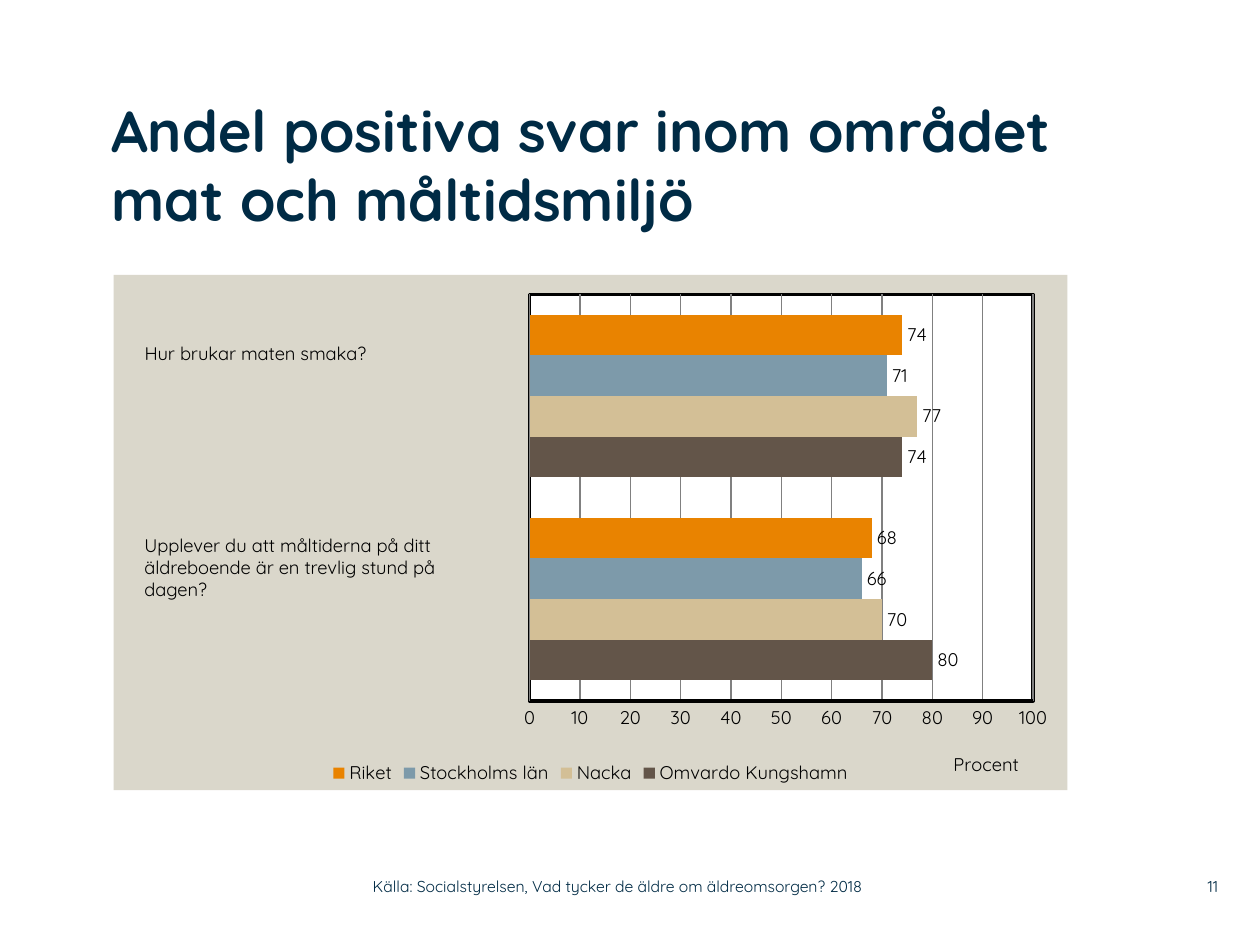
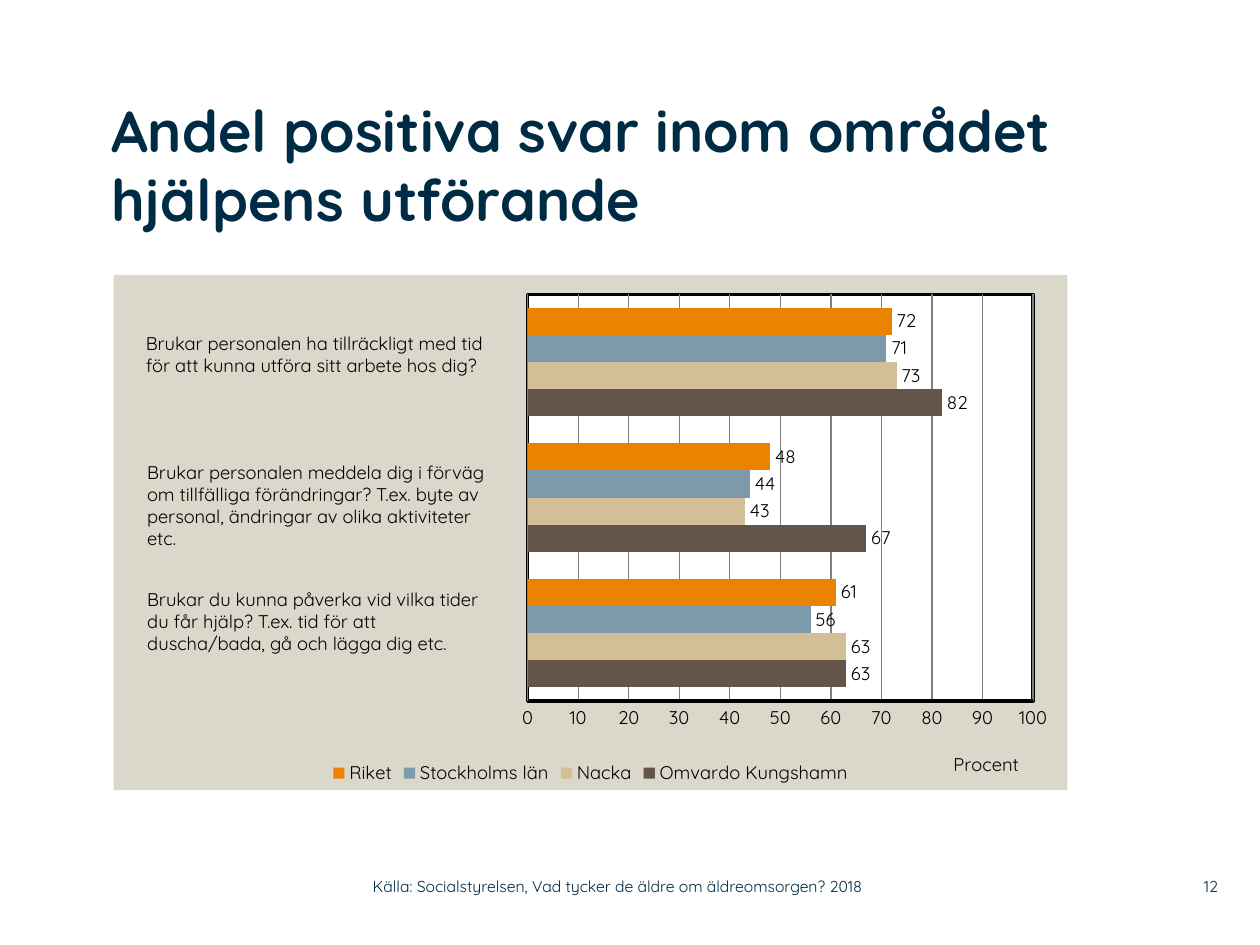
import dataclasses

import pptx
import pptx.chart.data
import pptx.dml.color
import pptx.enum.chart
import pptx.enum.text
import pptx.oxml
import pptx.oxml.ns
import pptx.util

Pt = pptx.util.Pt
RGBColor = pptx.dml.color.RGBColor
qn = pptx.oxml.ns.qn


@dataclasses.dataclass(frozen=True)
class Theme:
    font: str = "Quicksand"
    navy: str = "002B45"
    black: str = "000000"
    white: str = "FFFFFF"
    panel: str = "DAD7CB"
    grid: str = "808080"
    title_size: float = 33
    body_size: float = 10.5
    footer_size: float = 9
    axis_width: float = 2
    grid_width: float = 0.75


@dataclasses.dataclass(frozen=True)
class Box:
    left: float
    top: float
    width: float
    height: float

    def lengths(self) -> tuple:
        return tuple(Pt(value) for value in dataclasses.astuple(self))


@dataclasses.dataclass(frozen=True)
class Respondent:
    name: str
    color: str


@dataclasses.dataclass(frozen=True)
class Question:
    box: Box
    lines: tuple[str, ...]
    percentages: tuple[int, ...]


@dataclasses.dataclass(frozen=True)
class SurveyArea:
    title: str
    title_width: float
    number: int
    plot_left: float
    plot_width: float
    questions: tuple[Question, ...]


THEME = Theme()
CHART_BOX = Box(65, 157, 545, 294.5)
SOURCE_BOX = Box(213, 496, 319, 21)
NUMBER_BOX = Box(662.5, 496, 33.5, 21)
SOURCE = "Källa: Socialstyrelsen, Vad tycker de äldre om äldreomsorgen? 2018"

RESPONDENTS = (
    Respondent("Omvardo Kungshamn", "635549"),
    Respondent("Nacka", "D3BF96"),
    Respondent("Stockholms län", "7D9AAA"),
    Respondent("Riket", "E98300"),
)

AREAS = (
    SurveyArea(
        "Andel positiva svar inom området mat och måltidsmiljö", 606, 11, 0.436, 0.528,
        (
            Question(Box(75.5, 192.25, 214, 20), ("Hur brukar maten smaka?",), (74, 77, 71, 74)),
            Question(
                Box(75.5, 301.75, 211, 45.5),
                ("Upplever du att måltiderna på ditt äldreboende är en trevlig stund på", "dagen?"),
                (80, 70, 66, 68),
            ),
        ),
    ),
    SurveyArea(
        "Andel positiva svar inom området hjälpens utförande", 547, 12, 0.434, 0.53,
        (
            Question(
                Box(76.25, 186.5, 215.5, 32.5),
                ("Brukar personalen ha tillräckligt med tid", "för att kunna utföra sitt arbete hos dig?"),
                (82, 73, 71, 72),
            ),
            Question(
                Box(77, 260, 214, 58.5),
                ("Brukar personalen meddela dig i förväg om tillfälliga förändringar? "
                 "T.ex. byte av personal, ändringar av olika aktiviteter etc.",),
                (67, 43, 44, 48),
            ),
            Question(
                Box(77, 332.75, 214, 45.5),
                ("Brukar du kunna påverka vid vilka tider", "du får hjälp? T.ex. tid för att",
                 "duscha/bada, gå och lägga dig etc."),
                (63, 63, 56, 61),
            ),
        ),
    ),
)


def style_font(font, size: float, color: str, bold: bool = False) -> None:
    font.name = THEME.font
    font.size = Pt(size)
    font.bold = bold
    font.color.rgb = RGBColor.from_string(color)


def add_text(slide, box: Box, lines: tuple[str, ...], size: float, color: str,
             bold: bool = False, inset: bool = False, middle: bool = False,
             align=pptx.enum.text.PP_ALIGN.LEFT):
    text_frame = slide.shapes.add_textbox(*box.lengths()).text_frame
    text_frame.word_wrap = True
    if not inset:
        text_frame.margin_left = text_frame.margin_right = Pt(0)
        text_frame.margin_top = text_frame.margin_bottom = Pt(0)
    anchors = pptx.enum.text.MSO_ANCHOR
    text_frame.vertical_anchor = anchors.MIDDLE if middle else anchors.TOP
    text_frame.text = "\n".join(lines)
    for paragraph in text_frame.paragraphs:
        paragraph.alignment = align
        for run in paragraph.runs:
            style_font(run.font, size, color, bold)
    return text_frame


def chart_layout(left: float, top: float, size: tuple[float, float] | None = None):
    parts = {"xMode": "edge", "yMode": "edge", "x": left, "y": top}
    if size:
        parts = {"layoutTarget": "inner", **parts, "w": size[0], "h": size[1]}
    children = "".join(f'<c:{name} val="{value}"/>' for name, value in parts.items())
    return pptx.oxml.parse_xml(
        f'<c:layout {pptx.oxml.ns.nsdecls("c")}><c:manualLayout>{children}</c:manualLayout></c:layout>'
    )


def area_format(fill: str, line: str | None = None):
    outline = "<a:ln><a:noFill/></a:ln>"
    if line:
        outline = (f'<a:ln w="{Pt(THEME.axis_width)}"><a:solidFill>'
                   f'<a:srgbClr val="{line}"/></a:solidFill></a:ln>')
    return pptx.oxml.parse_xml(
        f'<c:spPr {pptx.oxml.ns.nsdecls("c", "a")}><a:solidFill><a:srgbClr val="{fill}"/>'
        f'</a:solidFill>{outline}</c:spPr>'
    )


def style_line(line, color: str, width: float) -> None:
    line.color.rgb = RGBColor.from_string(color)
    line.width = Pt(width)


def style_percent_axis(axis) -> None:
    axis.minimum_scale, axis.maximum_scale, axis.major_unit = 0, 100, 10
    axis.major_tick_mark = axis.minor_tick_mark = pptx.enum.chart.XL_TICK_MARK.NONE
    style_line(axis.format.line, THEME.black, THEME.axis_width)
    style_line(axis.major_gridlines.format.line, THEME.grid, THEME.grid_width)
    style_font(axis.tick_labels.font, THEME.body_size, THEME.black)
    title = axis.axis_title
    title.text_frame.text = "Procent"
    style_font(title.text_frame.paragraphs[0].runs[0].font, THEME.body_size, THEME.black)
    title_element = title.format.line and title.element
    for layout in title_element.findall(qn("c:layout")):
        title_element.remove(layout)
    title_element.find(qn("c:tx")).addnext(chart_layout(0.877, 0.918))


def add_answer_chart(slide, area: SurveyArea) -> None:
    bottom_up = area.questions[::-1]
    data = pptx.chart.data.CategoryChartData()
    data.categories = [str(index + 1) for index in range(len(bottom_up))]
    for index, respondent in enumerate(RESPONDENTS):
        data.add_series(respondent.name, [question.percentages[index] for question in bottom_up])
    chart = slide.shapes.add_chart(
        pptx.enum.chart.XL_CHART_TYPE.BAR_CLUSTERED, *CHART_BOX.lengths(), data
    ).chart
    style_font(chart.font, THEME.body_size, THEME.black)
    chart.has_title = False
    chart.has_legend = True
    chart.legend.position = pptx.enum.chart.XL_LEGEND_POSITION.BOTTOM
    chart.legend.include_in_layout = False
    style_font(chart.legend.font, THEME.body_size, THEME.black)
    chart.category_axis.visible = False
    style_percent_axis(chart.value_axis)

    plot = chart.plots[0]
    plot.gap_width = 100
    plot.overlap = 0
    plot.vary_by_categories = False
    for series, respondent in zip(plot.series, RESPONDENTS):
        series.invert_if_negative = False
        series.format.fill.solid()
        series.format.fill.fore_color.rgb = RGBColor.from_string(respondent.color)
        labels = series.data_labels
        labels.show_value = True
        labels.position = pptx.enum.chart.XL_LABEL_POSITION.OUTSIDE_END
        style_font(labels.font, THEME.body_size, THEME.black)

    chart_element = chart.element.find(qn("c:chart"))
    chart_element.addnext(area_format(THEME.panel))
    plot_area = chart_element.find(qn("c:plotArea"))
    for layout in plot_area.findall(qn("c:layout")):
        plot_area.remove(layout)
    plot_area.insert(0, chart_layout(area.plot_left, 0.038, (area.plot_width, 0.789)))
    plot_area.append(area_format(THEME.white, THEME.black))


def add_area_slide(presentation, area: SurveyArea) -> None:
    slide = presentation.slides.add_slide(presentation.slide_layouts[6])
    add_answer_chart(slide, area)
    add_text(slide, Box(63.5, 54, area.title_width, 102), (area.title,),
             THEME.title_size, THEME.navy, bold=True)
    for question in area.questions:
        text_frame = add_text(slide, question.box, question.lines,
                              THEME.body_size, THEME.black, inset=True)
        text_frame.auto_size = pptx.enum.text.MSO_AUTO_SIZE.SHAPE_TO_FIT_TEXT
    add_text(slide, NUMBER_BOX, (str(area.number),), THEME.footer_size, THEME.navy,
             middle=True, align=pptx.enum.text.PP_ALIGN.RIGHT)
    add_text(slide, SOURCE_BOX, (SOURCE,), THEME.footer_size, THEME.navy, middle=True)


def main() -> None:
    presentation = pptx.Presentation()
    presentation.slide_width, presentation.slide_height = Pt(720), Pt(540)
    for area in AREAS:
        add_area_slide(presentation, area)
    presentation.save("out.pptx")


if __name__ == "__main__":
    main()
